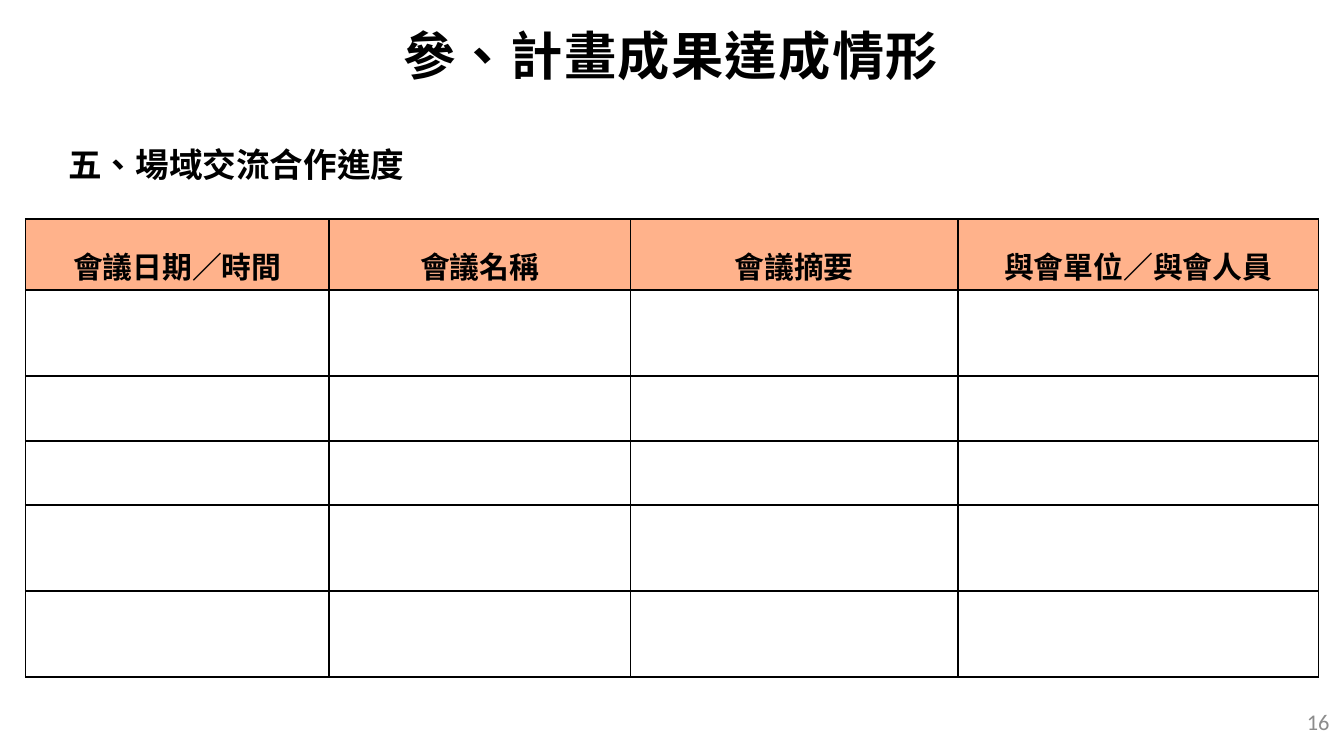
import pptx
import pptx.util
from lxml import etree
from pptx.dml.color import RGBColor
from pptx.enum.text import MSO_ANCHOR, MSO_AUTO_SIZE, PP_ALIGN
from pptx.oxml.ns import qn
from pptx.util import Inches, Pt

COLORS = {"text": "000000", "header": "FFB28B", "border": "000000", "number": "8C8C8C"}
CJK = "Noto Sans CJK SC"
HEADERS = ["會議日期／時間", "會議名稱", "會議摘要", "與會單位／與會人員"]
COL_WIDTHS = [2.26, 2.24, 2.44, 2.68]
ROW_HEIGHTS = [0.53, 0.64, 0.48, 0.48, 0.64, 0.64]


def set_attrs(obj, values):
    for name, value in values.items():
        setattr(obj, name, value)


def write_text(tf, text, size, align, color="text", font=CJK, bold=True):
    p = tf.paragraphs[0]
    p.alignment = align
    r = p.add_run()
    r.text = text
    set_attrs(r.font, {"size": Pt(size), "name": font, "bold": bold})
    r.font.color.rgb = RGBColor.from_string(COLORS[color])
    rPr = r.font._element
    rPr.set("lang", "zh-TW")
    etree.SubElement(rPr, qn("a:ea"), typeface=font)
    return p


def place(sp, left, top, width, height):
    box = {"left": left, "top": top, "width": width, "height": height}
    set_attrs(sp, {name: Inches(value) for name, value in box.items()})


def add_title(s, text):
    sp = s.shapes.title
    place(sp, -0.01, -0.02, 10, 0.85)
    tf = sp.text_frame
    set_attrs(tf, {
        "word_wrap": True, "auto_size": MSO_AUTO_SIZE.NONE,
        "vertical_anchor": MSO_ANCHOR.MIDDLE,
        "margin_left": Inches(0.07), "margin_right": Inches(0.07),
        "margin_top": Inches(0.04), "margin_bottom": Inches(0.04),
    })
    p = write_text(tf, text, 28, PP_ALIGN.CENTER)
    p.runs[0].font._element.set("spc", "80")


def add_text(s, box, text, size, align, anchor=MSO_ANCHOR.TOP, **font):
    sp = s.shapes.add_textbox(*map(Inches, box))
    set_attrs(sp.text_frame, {"word_wrap": True, "vertical_anchor": anchor})
    write_text(sp.text_frame, text, size, align, **font)


def add_borders(cell):
    tcPr = cell._tc.get_or_add_tcPr()
    for i, side in enumerate(("lnL", "lnR", "lnT", "lnB")):
        ln = etree.Element(qn(f"a:{side}"), w=str(Pt(1)))
        fill = etree.SubElement(ln, qn("a:solidFill"))
        etree.SubElement(fill, qn("a:srgbClr"), val=COLORS["border"])
        tcPr.insert(i, ln)


def format_header(cell, text):
    set_attrs(cell, {
        "vertical_anchor": MSO_ANCHOR.MIDDLE,
        "margin_left": Inches(0.07), "margin_right": Inches(0.07),
        "margin_top": 0, "margin_bottom": 0,
    })
    cell.fill.solid()
    cell.fill.fore_color.rgb = RGBColor.from_string(COLORS["header"])
    write_text(cell.text_frame, text, 16, PP_ALIGN.CENTER).line_spacing = 1.5


def add_meeting_table(s):
    table = s.shapes.add_table(
        len(ROW_HEIGHTS), len(COL_WIDTHS), Inches(0.19), Inches(1.63),
        Inches(sum(COL_WIDTHS)), Inches(sum(ROW_HEIGHTS))).table
    set_attrs(table, {"first_row": False, "horz_banding": False})
    for column, width in zip(table.columns, COL_WIDTHS):
        column.width = Inches(width)
    for row, height in zip(table.rows, ROW_HEIGHTS):
        row.height = Inches(height)
    for cell in table.iter_cells():
        cell.fill.background()
        add_borders(cell)
    for cell, text in zip(table.rows[0].cells, HEADERS):
        format_header(cell, text)


def main():
    prs = pptx.Presentation()
    set_attrs(prs, {"slide_width": Inches(10), "slide_height": Inches(10) * 9 // 16})
    s = prs.slides.add_slide(prs.slide_layouts[5])
    add_text(s, (7.74, 5.22, 2.25, 0.3), "16", 12, PP_ALIGN.RIGHT,
             MSO_ANCHOR.MIDDLE, color="number", font="Calibri", bold=False)
    add_title(s, "參、計畫成果達成情形")
    add_text(s, (0.41, 1.02, 9.17, 0.4), "五、場域交流合作進度", 18, PP_ALIGN.LEFT)
    add_meeting_table(s)
    prs.save("out.pptx")


if __name__ == "__main__":
    main()
